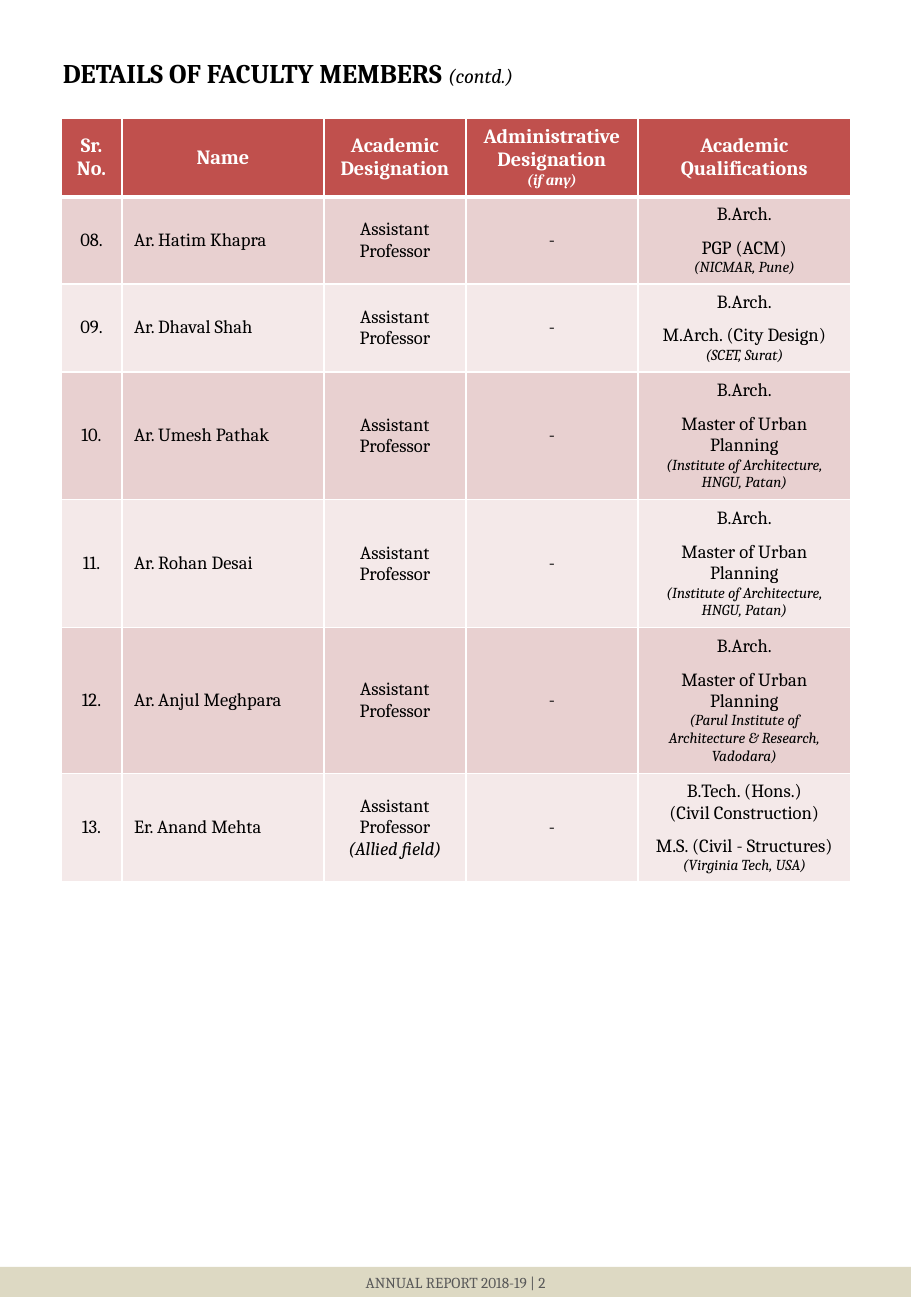
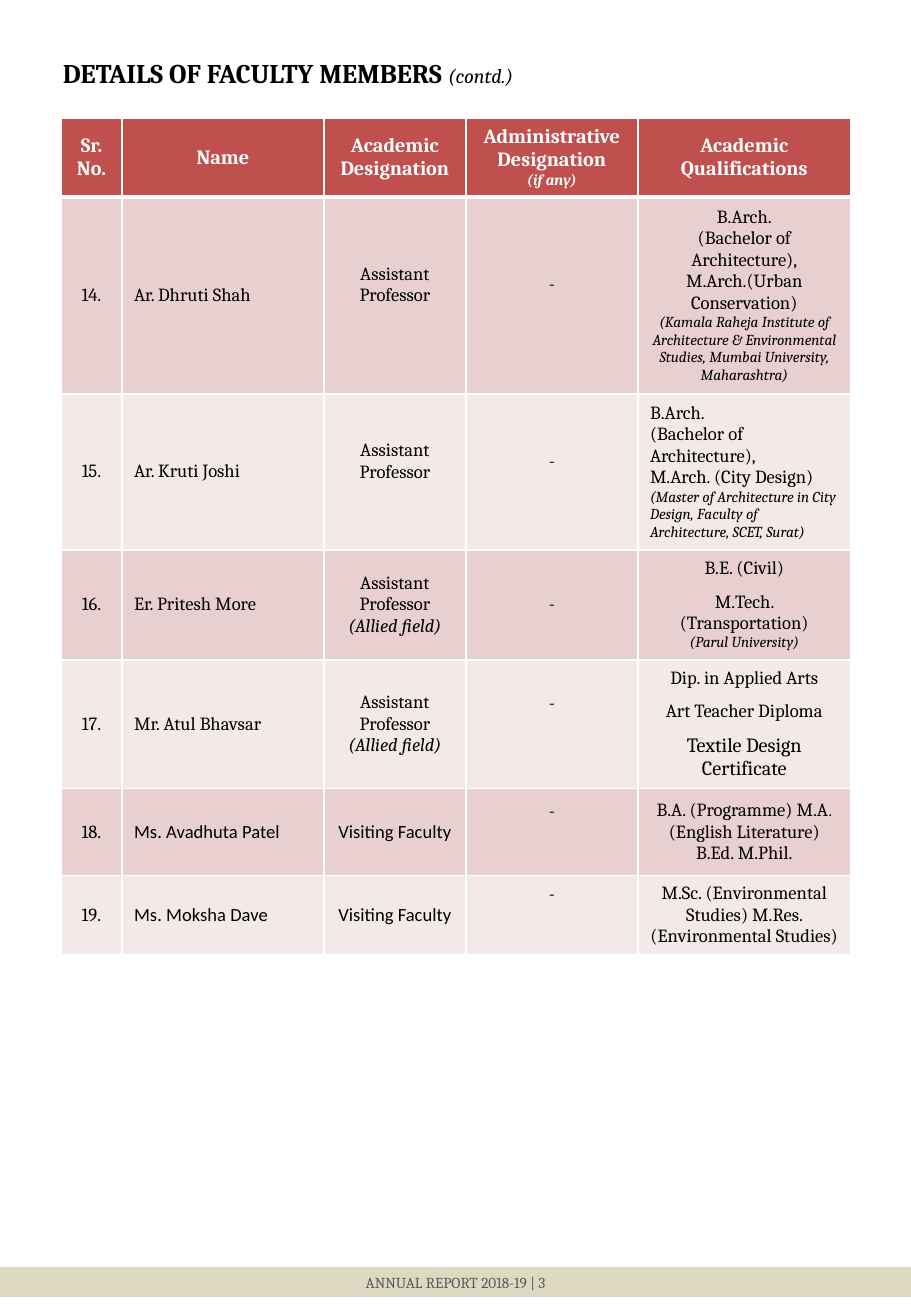
from dataclasses import dataclass

from lxml import etree
from pptx import Presentation
from pptx import util as u
from pptx.dml.color import RGBColor
from pptx.enum import shapes, text
from pptx.oxml import ns

PX = 7526  # EMU in one px


@dataclass(frozen=True)
class Theme:
    serif: str = "Cambria"
    sans: str = "Calibri"
    ink: str = "000000"
    white: str = "FFFFFF"
    header: str = "C0504D"
    bands: tuple = ("E8D0D0", "F4E9E9")
    footer: str = "DDD9C3"
    footer_ink: str = "595959"
    title_pt: int = 16
    heading_pt: int = 12
    body_pt: int = 11
    small_pt: int = 9
    degree_gap_pt: int = 7
    rule_pt: int = 1
    header_rule_pt: int = 3


THEME = Theme()
CENTER, LEFT = text.PP_ALIGN.CENTER, text.PP_ALIGN.LEFT

PAGE = (911, 1316)
TITLE_BOX = (51, 51, 850, 45)
TABLE_AT = (61, 118)
FOOTER_BOX = (0, 1267, 911, 30)
COLUMNS = (61, 202, 142, 172, 213)
HEADER_HEIGHT = 78
CELL_INSET = 6
LINE_HEIGHT = 21


@dataclass
class Line:
    """One paragraph; content is a string or a list of (text, size, font)."""
    content: object
    size: int = THEME.body_pt
    font: str = THEME.serif
    color: str = THEME.ink
    bold: bool = False
    italic: bool = False
    gap: int = 0
    align: object = CENTER


@dataclass
class Member:
    """degrees holds groups of lines; raised_* counts the lines a cell is lifted by."""
    number: str
    name: str
    height: int
    degrees: list
    institute: str = ""
    allied: bool = False
    visiting: bool = False
    raised_post: int = 0
    raised_dash: int = 0
    align: object = CENTER
    last_size: int = THEME.body_pt


URBAN_PLANNING = [["B.Arch."], ["Master of Urban Planning"]]
HNGU = "(Institute of Architecture, HNGU, Patan)"

PAGES = {
    2: [
        Member("08.", "Ar. Hatim Khapra", 87, [["B.Arch."], ["PGP (ACM)"]], "(NICMAR, Pune)"),
        Member("09.", "Ar. Dhaval Shah", 88, [["B.Arch."], ["M.Arch. (City Design)"]],
               "(SCET, Surat)"),
        Member("10.", "Ar. Umesh Pathak", 128, URBAN_PLANNING, HNGU),
        Member("11.", "Ar. Rohan Desai", 128, URBAN_PLANNING, HNGU),
        Member("12.", "Ar. Anjul Meghpara", 145, URBAN_PLANNING,
               "(Parul Institute of Architecture & Research, Vadodara)"),
        Member("13.", "Er. Anand Mehta", 109,
               [["B.Tech. (Hons.)", "(Civil Construction)"], ["M.S. (Civil - Structures)"]],
               "(Virginia Tech, USA)", allied=True),
    ],
    3: [
        Member("14.", "Ar. Dhruti Shah", 197,
               [["B.Arch.", "(Bachelor of Architecture),", "M.Arch.(Urban Conservation)"]],
               "(Kamala Raheja Institute of Architecture & Environmental Studies, "
               "Mumbai University, Maharashtra)", raised_post=1, raised_dash=1),
        Member("15.", "Ar. Kruti Joshi", 156,
               [["B.Arch.", "(Bachelor of Architecture),", "M.Arch. (City Design)"]],
               "(Master of Architecture in City Design, Faculty of Architecture, SCET, Surat)",
               raised_post=1, raised_dash=1, align=LEFT),
        Member("16.", "Er. Pritesh More", 110, [["B.E. (Civil)"], ["M.Tech. (Transportation)"]],
               "(Parul University)", allied=True),
        Member("17.", "Mr. Atul Bhavsar", 129,
               [["Dip. in Applied Arts"], ["Art Teacher Diploma"],
                ["Textile Design Certificate"]],
               allied=True, raised_dash=2, last_size=THEME.heading_pt),
        Member("18.", "Ms. Avadhuta Patel", 87,
               [[[("B.A. (Programme) M.A", THEME.body_pt, THEME.serif),
                  (". ", THEME.small_pt, THEME.sans),
                  ("(English Literature) B.Ed. M.Phil.", THEME.body_pt, THEME.serif)]]],
               visiting=True, raised_dash=2),
        Member("19.", "Ms. Moksha Dave", 78,
               [["M.Sc. (Environmental Studies) M.Res. (Environmental Studies)"]],
               visiting=True, raised_dash=2),
    ],
}


def px(*lengths):
    return [u.Emu(length * PX) for length in lengths]


def rgb(value):
    return RGBColor.from_string(value)


def style_font(font, line):
    font.name, font.size = line.font, u.Pt(line.size)
    font.bold, font.italic = line.bold, line.italic
    font.color.rgb = rgb(line.color)


def write_lines(frame, lines):
    for index, line in enumerate(lines):
        paragraph = frame.add_paragraph() if index else frame.paragraphs[0]
        paragraph.alignment = line.align
        if line.gap:
            paragraph.space_before = u.Pt(line.gap)
        style_font(paragraph.font, line)
        if isinstance(line.content, str):
            paragraph.add_run().text = line.content
            continue
        for content, size, font in line.content:
            run = paragraph.add_run()
            run.text = content
            run.font.size, run.font.name = u.Pt(size), font


def set_borders(cell, top, bottom):
    properties = cell._tc.get_or_add_tcPr()
    widths = {"a:lnL": THEME.rule_pt, "a:lnR": THEME.rule_pt, "a:lnT": top, "a:lnB": bottom}
    for tag, width in widths.items():
        border = etree.SubElement(properties, ns.qn(tag), w=str(u.Pt(width)))
        fill = etree.SubElement(border, ns.qn("a:solidFill"))
        etree.SubElement(fill, ns.qn("a:srgbClr"), val=THEME.white)


def fill_cell(cell, lines, color, top=THEME.rule_pt, bottom=THEME.rule_pt, raised=0):
    set_borders(cell, top, bottom)
    cell.fill.solid()
    cell.fill.fore_color.rgb = rgb(color)
    cell.vertical_anchor = text.MSO_ANCHOR.MIDDLE
    cell.margin_top, cell.margin_bottom = px(CELL_INSET, CELL_INSET + raised * LINE_HEIGHT)
    write_lines(cell.text_frame, lines)


def header_cells():
    def heading(content, size=THEME.heading_pt, italic=False):
        return Line(content, size, color=THEME.white, bold=True, italic=italic)

    return [
        [heading("Sr. No.")],
        [heading("Name")],
        [heading("Academic"), heading("Designation")],
        [heading("Administrative Designation"), heading("(if any)", THEME.small_pt, True)],
        [heading("Academic Qualifications")],
    ]


def qualification_lines(member):
    lines = [Line(content, gap=THEME.degree_gap_pt if group and not index else 0,
                  align=member.align)
             for group, degree in enumerate(member.degrees)
             for index, content in enumerate(degree)]
    lines[-1].size = member.last_size
    if member.institute:
        lines.append(Line(member.institute, THEME.small_pt, italic=True, align=member.align))
    return lines


def member_cells(member):
    """Return (lines, lines raised by) for each column."""
    font = THEME.sans if member.visiting else THEME.serif
    posts = ["Visiting Faculty"] if member.visiting else ["Assistant", "Professor"]
    post_lines = [Line(post, font=font) for post in posts]
    if member.allied:
        post_lines.append(Line("(Allied field)", italic=True))
    return [
        ([Line(member.number)], 0),
        ([Line(member.name, font=font, align=LEFT)], 0),
        (post_lines, member.raised_post),
        ([Line("-")], member.raised_dash),
        (qualification_lines(member), 0),
    ]


def add_faculty_table(slide, at, members):
    heights = [HEADER_HEIGHT] + [member.height for member in members]
    table = slide.shapes.add_table(len(heights), len(COLUMNS),
                                   *px(*at, sum(COLUMNS), sum(heights))).table
    table.horz_banding = False
    for column, width in zip(table.columns, px(*COLUMNS)):
        column.width = width
    for row, height in zip(table.rows, px(*heights)):
        row.height = height

    for column, lines in enumerate(header_cells()):
        fill_cell(table.cell(0, column), lines, THEME.header, bottom=THEME.header_rule_pt)
    for row, member in enumerate(members, 1):
        top = THEME.header_rule_pt if row == 1 else THEME.rule_pt
        band = THEME.bands[(row - 1) % 2]
        for column, (lines, raised) in enumerate(member_cells(member)):
            fill_cell(table.cell(row, column), lines, band, top=top, raised=raised)


def add_title(slide, box):
    frame = slide.shapes.add_textbox(*px(*box)).text_frame
    frame.word_wrap = True
    paragraph = frame.paragraphs[0]
    for line in (Line("DETAILS OF FACULTY MEMBERS ", THEME.title_pt, bold=True),
                 Line("(contd.)", THEME.heading_pt, italic=True)):
        run = paragraph.add_run()
        run.text = line.content
        style_font(run.font, line)


def add_footer(slide, box, page_number):
    band = slide.shapes.add_shape(shapes.MSO_SHAPE.RECTANGLE, *px(*box))
    band.shadow.inherit = False
    band.fill.solid()
    band.fill.fore_color.rgb = rgb(THEME.footer)
    band.line.fill.background()
    band.text_frame.word_wrap = True
    band.text_frame.vertical_anchor = text.MSO_ANCHOR.MIDDLE
    write_lines(band.text_frame, [Line(f"ANNUAL REPORT 2018-19 | {page_number}",
                                       THEME.small_pt, color=THEME.footer_ink)])


def add_faculty_page(deck, page_number, members):
    slide = deck.slides.add_slide(deck.slide_layouts[6])
    add_title(slide, TITLE_BOX)
    add_faculty_table(slide, TABLE_AT, members)
    add_footer(slide, FOOTER_BOX, page_number)


def main():
    deck = Presentation()
    deck.slide_width, deck.slide_height = px(*PAGE)
    for page_number, members in PAGES.items():
        add_faculty_page(deck, page_number, members)
    deck.save("out.pptx")


if __name__ == "__main__":
    main()
